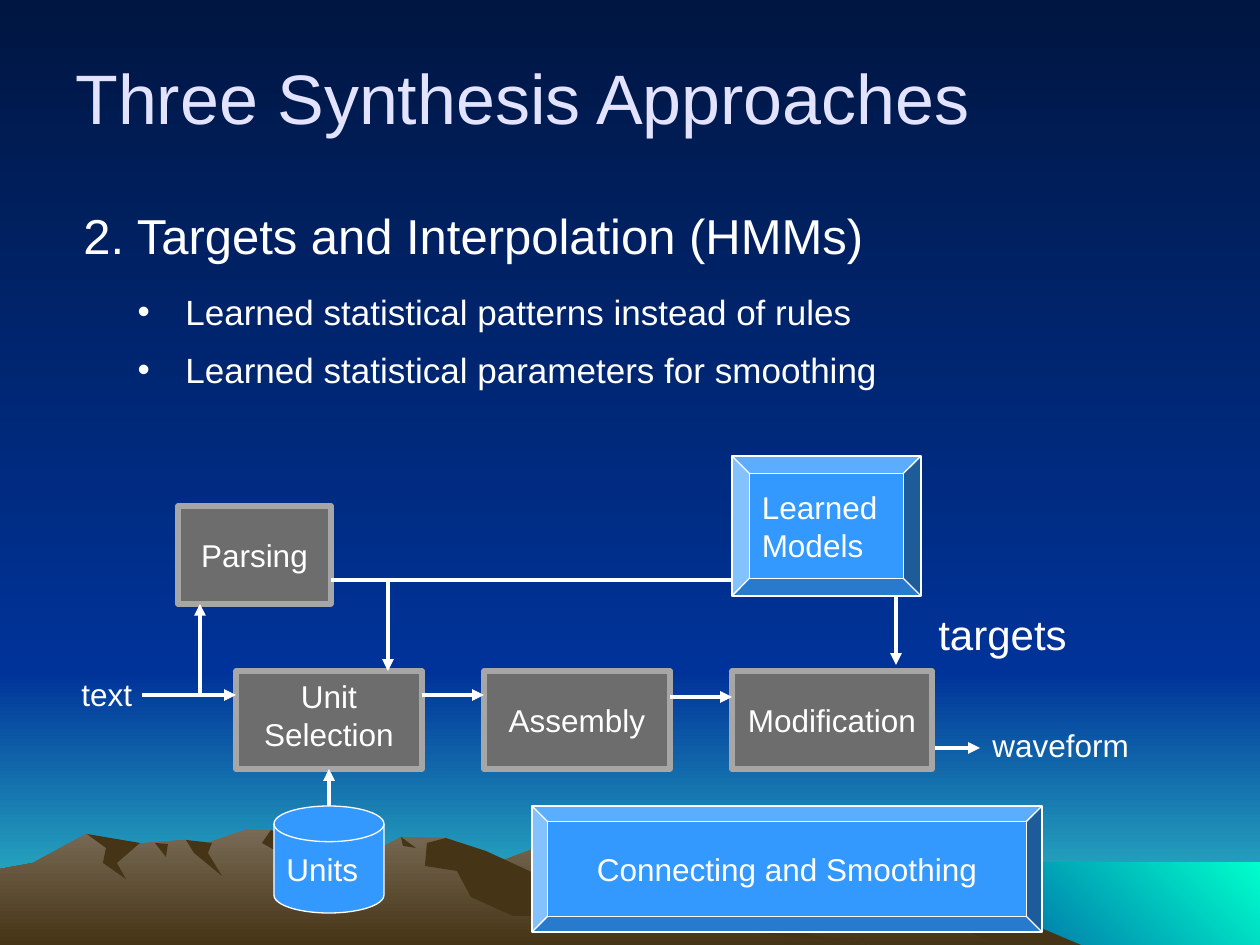
from dataclasses import dataclass

from lxml.etree import SubElement
from pptx import Presentation
from pptx.dml.color import RGBColor
from pptx.enum.shapes import MSO_CONNECTOR, MSO_SHAPE as Kind
from pptx.enum.text import MSO_ANCHOR as Anchor, PP_ALIGN as Align
from pptx.oxml.ns import qn
from pptx.util import Inches, Pt

PX = Inches(1) / 126
BOTTOM_SIDE = 2

WHITE = RGBColor(0xFF, 0xFF, 0xFF)
LAVENDER = RGBColor(0xE3, 0xE3, 0xFF)
GRAY = RGBColor(0x6D, 0x6D, 0x6D)
LIGHT_GRAY = RGBColor(0xA6, 0xA6, 0xA6)
BLUE = RGBColor(0x33, 0x99, 0xFF)
NIGHT = RGBColor(0x00, 0x16, 0x42)
SKY = RGBColor(0x00, 0x33, 0x99)
HORIZON = RGBColor(0x33, 0xCC, 0xCC)
SEA = RGBColor(0x00, 0xFF, 0xCC)
ROCK = RGBColor(0x78, 0x6A, 0x55)
EARTH = RGBColor(0x46, 0x34, 0x16)


@dataclass
class Box:
    """A rectangle in px."""
    left: int
    top: int
    width: int
    height: int

    @property
    def right(self):
        return self.left + self.width

    @property
    def bottom(self):
        return self.top + self.height

    @property
    def center(self):
        return self.left + self.width // 2

    def inside(self, left, top, width, height):
        """A box whose place is counted from this box's corner."""
        return Box(self.left + left, self.top + top, width, height)

    def emu(self):
        return [px(value) for value in (self.left, self.top, self.width, self.height)]


def px(value):
    return round(value * PX)


# Text

def write(frame, *lines, size=18, color=WHITE, align=Align.LEFT, spacing=1.0,
          before=0, after=0, bullet=False):
    """Append one paragraph for each line."""
    for line in lines:
        paragraph = frame.add_paragraph() if frame.text else frame.paragraphs[0]
        paragraph.alignment, paragraph.line_spacing = align, spacing
        paragraph.space_before, paragraph.space_after = Pt(before), Pt(after)
        run = paragraph.add_run()
        run.text = line
        run.font.name, run.font.size = "Arial", Pt(size)
        run.font.color.rgb = color
        if bullet:
            paragraph.level = 1
            properties = paragraph._p.get_or_add_pPr()
            properties.set("marL", str(Inches(0.81)))
            properties.set("indent", str(-Inches(0.38)))
            SubElement(properties, qn("a:buFont"), typeface="Arial")
            SubElement(properties, qn("a:buChar"), char="•")


def add_text(slide, box, *lines, wrap=True, anchor=Anchor.TOP, **style):
    frame = slide.shapes.add_textbox(*box.emu()).text_frame
    frame.word_wrap, frame.vertical_anchor = wrap, anchor
    write(frame, *lines, **style)
    return frame


# Shapes

def paint(shape, colors, angle=270):
    """Fill with one colour, or blend two along the angle."""
    shape.shadow.inherit = False
    if len(colors) == 1:
        shape.fill.solid()
        shape.fill.fore_color.rgb = colors[0]
    else:
        shape.fill.gradient()
        shape.fill.gradient_angle = angle
        for stop, color in zip(shape.fill.gradient_stops, colors):
            stop.color.rgb = color


def add_shape(slide, kind, box, *lines, fill=BLUE, line=WHITE, weight=0.75,
              align=Align.LEFT, anchor=Anchor.MIDDLE):
    shape = slide.shapes.add_shape(kind, *box.emu())
    paint(shape, [fill])
    shape.line.color.rgb, shape.line.width = line, Pt(weight)
    shape.text_frame.word_wrap, shape.text_frame.vertical_anchor = True, anchor
    write(shape.text_frame, *lines, align=align)
    return shape


def add_band(slide, box, colors, angle=270):
    band = slide.shapes.add_shape(Kind.RECTANGLE, *box.emu())
    paint(band, colors, angle)
    band.line.fill.background()


def add_outline(slide, box, points, *colors):
    first, *rest = [(box.left + x, box.top + y) for x, y in points]
    builder = slide.shapes.build_freeform(*first, scale=PX)
    builder.add_line_segments(rest, close=True)
    outline = builder.convert_to_shape()
    paint(outline, colors)
    outline.line.fill.background()


def add_arrow(slide, x1, y1, x2, y2):
    arrow = slide.shapes.add_connector(MSO_CONNECTOR.STRAIGHT, px(x1), px(y1), px(x2), px(y2))
    arrow.line.color.rgb, arrow.line.width = WHITE, Pt(2.25)
    SubElement(arrow.line._get_or_add_ln(), qn("a:tailEnd"), type="triangle")
    SubElement(arrow._element.spPr, qn("a:effectLst"))
    return arrow


# Regions

def draw_backdrop(slide, box):
    horizon, shore_x, shore_y = 672, 861, 862
    add_band(slide, box.inside(0, 0, box.width, horizon), [NIGHT, SKY])
    add_band(slide, box.inside(0, horizon, box.width, box.height - horizon), [SKY, HORIZON])
    add_band(slide, box.inside(shore_x, shore_y, box.width - shore_x, box.height - shore_y),
             [SKY, SEA], angle=45)


def draw_mountains(slide, box):
    """Each range is a ridge closed along the foot, with dark gullies cut into it."""
    foot = box.height
    far_ridge = [(412, 893), (496, 863), (586, 829), (713, 878), (863, 832), (911, 879)]
    far_gullies = [[(863, 832), (925, 886), (1003, 912), (1081, foot), (998, foot), (907, 903)]]
    near_ridge = [(0, 869), (33, 863), (86, 834), (118, 845), (186, 840), (202, 845),
                  (247, 829), (271, 830), (297, 858), (341, 859), (373, 852), (401, 837),
                  (446, 838), (544, 897)]
    near_gullies = [
        [(87, 834), (140, 843), (117, 863), (126, 879), (103, 863), (106, 848)],
        [(155, 843), (168, 844), (166, 857)],
        [(186, 840), (212, 843), (208, 853), (222, 876), (194, 853)],
        [(271, 830), (341, 859), (329, 868), (336, 893), (304, 867), (262, 843)],
        [(401, 837), (416, 848), (403, 846)],
        [(427, 843), (446, 838), (486, 851), (573, 891), (869, foot), (595, 916),
         (513, 916), (471, 897), (457, 871), (425, 866)],
    ]
    for start, ridge, end, gullies in [(325, far_ridge, 1034, far_gullies),
                                       (0, near_ridge, 869, near_gullies)]:
        add_outline(slide, box, [(start, foot), *ridge, (end, foot)], ROCK, EARTH)
        for gully in gullies:
            add_outline(slide, box, gully, EARTH)


def draw_body(slide, box):
    frame = add_text(slide, box, "2. Targets and Interpolation (HMMs)",
                     size=28, spacing=1.2, before=6, after=6)
    write(frame, "Learned statistical patterns instead of rules",
          "Learned statistical parameters for smoothing",
          size=20, spacing=1.2, before=4, bullet=True)


def draw_diagram(slide, box):
    # Places: three steps in a row at an equal pitch, the rest around them
    row, pitch, height = 215, 248, 98
    selection, assembly, modification = [
        box.inside(167 + index * pitch, row, width, height)
        for index, width in enumerate((186, 186, 200))]
    parsing = box.inside(109, 50, 153, height)
    models = box.inside(663, 0, 189, 140)
    units = box.inside(205, 350, 110, 107)
    smoothing = box.inside(463, 350, 510, 126)
    text = box.inside(0, 213, 77, 50)
    waveform = box.inside(911, 264, 164, 50)
    targets = box.inside(857, 146, 166, 63)

    # Processing steps
    def add_step(place, label, anchor=Anchor.MIDDLE):
        return add_shape(slide, Kind.RECTANGLE, place, label, fill=GRAY, line=LIGHT_GRAY,
                         weight=3, align=Align.CENTER, anchor=anchor)

    add_step(parsing, "Parsing")
    selection_step = add_step(selection, "Unit Selection", Anchor.TOP)
    add_step(assembly, "Assembly")
    add_step(modification, "Modification")

    # Arrows between the steps
    flow_y = selection.top + 24
    pattern_y = parsing.bottom - 24
    output_y = modification.bottom - 21
    parse_x, pattern_x, target_x = parsing.left + 22, selection.right - 34, models.right - 25
    for ends in [
        (text.right - 4, flow_y, selection.left, flow_y),
        (selection.right, flow_y, assembly.left, flow_y),
        (assembly.right, flow_y + 2, modification.left, flow_y + 2),
        (modification.right + 3, output_y, waveform.left, output_y),
        (parse_x, flow_y, parse_x, parsing.bottom),
        (parsing.right, pattern_y, models.left + 19, pattern_y),
        (pattern_x, pattern_y, pattern_x, selection.top),
        (target_x, models.bottom + 1, target_x, modification.top - 6),
    ]:
        add_arrow(slide, *ends)

    # Data sources and smoothing
    add_shape(slide, Kind.FLOWCHART_MAGNETIC_DISK, units, "Units")
    units_arrow = add_arrow(slide, selection.center, units.top, selection.center, selection.bottom)
    units_arrow.end_connect(selection_step, BOTTOM_SIDE)
    add_shape(slide, Kind.BEVEL, models, "Learned", "Models")
    add_shape(slide, Kind.BEVEL, smoothing, "Connecting and Smoothing", align=Align.CENTER)

    # Labels
    add_text(slide, text, "text", wrap=False)
    add_text(slide, waveform, "waveform", wrap=False)
    add_text(slide, targets, "targets", size=24)


def main():
    page = Box(0, 0, 1260, 945)
    presentation = Presentation()
    presentation.slide_width, presentation.slide_height = px(page.width), px(page.height)
    slide = presentation.slides.add_slide(presentation.slide_layouts[6])
    draw_backdrop(slide, page)
    draw_mountains(slide, page)
    add_text(slide, page.inside(63, 17, 1008, 158), "Three Synthesis Approaches",
             size=40, color=LAVENDER, anchor=Anchor.MIDDLE)
    draw_body(slide, page.inside(71, 188, 1134, 299))
    draw_diagram(slide, page.inside(69, 456, 1075, 476))
    presentation.save("out.pptx")


if __name__ == "__main__":
    main()
